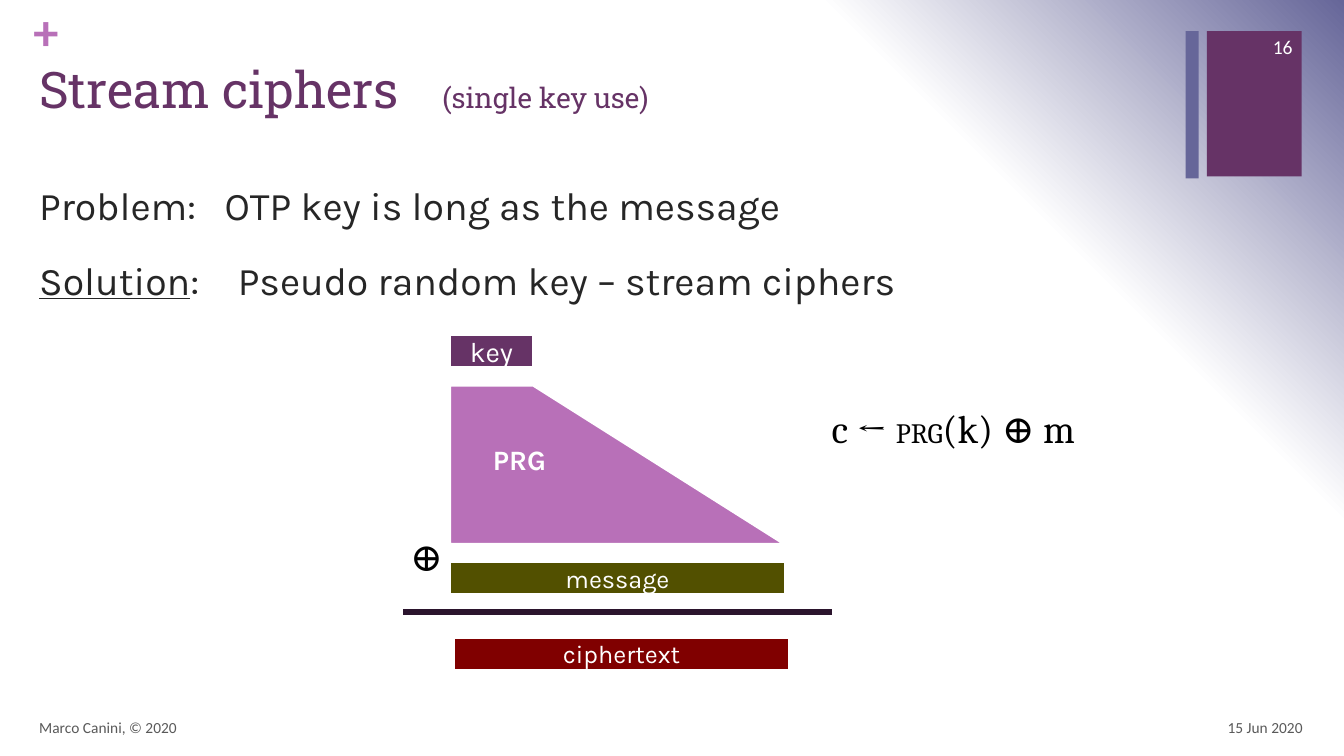
"""Builds the stream ciphers slide: a short key expanded by a PRG to encrypt a message."""
from lxml import etree
from pptx import Presentation
from pptx import util as u
from pptx.dml.color import RGBColor
from pptx.enum import shapes, text
from pptx.oxml import parse_xml
from pptx.oxml.ns import nsdecls, qn

THEME = {
    "plum": "663366", "orchid": "B870B8", "slate": "666699", "olive": "525000",
    "maroon": "800000", "rule": "2B142D", "ink": "262626", "grey": "595959",
    "white": "FFFFFF", "black": "000000",
    "head": "Roboto Slab", "body": "Karla", "math": "Cambria", "small": "Calibri",
    "title": 36, "large": 28, "label": 20, "bar": 18, "number": 14, "footer": 11,
}

LEFT, MIDDLE, RIGHT = text.PP_ALIGN.LEFT, text.PP_ALIGN.CENTER, text.PP_ALIGN.RIGHT

PANELS = [
    ((11.97, 0.31, 0.94, 1.44), "plum"),
    ((11.76, 0.31, 0.13, 1.46), "slate"),
]
TITLE = [("Stream ciphers\t", {}), ("(single key use)", {"size": "label"})]
BODY = [
    (1.84, [("Problem:\tOTP key is long as the message", {})]),
    (1.97, [("Solution", {"underline": True}),
            (":\tPseudo random key – stream ciphers", {})]),
]
FORMULA = [("c ← ", {}), ("PRG", {"size": "label"}), ("(k) ⊕ m", {})]

DIAGRAM_X, KEY_W, BAR_W, BAR_H = 4.46, 0.83, 3.33, 0.33
PRG_TOP, PRG_BOTTOM = 3.82, 5.4
BARS = [
    ("key", DIAGRAM_X, 3.32, KEY_W, "plum", "label"),
    ("message", DIAGRAM_X, 5.57, BAR_W, "olive", "bar"),
    ("ciphertext", 4.5, 6.32, BAR_W, "maroon", "bar"),
]
RULE = (4, 6.07, 8.25, 6.07)

LABELS = [
    ((0.33, 0, 0.38, 0.61), "+", ("small", "title", "orchid", True), LEFT, "TOP", 0),
    ((9.91, 7.02, 3.11, 0.4), "15 Jun 2020", ("small", "footer", "grey", False), RIGHT, "MIDDLE", 0.1),
    ((0.29, 7.02, 8.93, 0.4), "Marco Canini, © 2020", ("small", "footer", "grey", False), LEFT, "MIDDLE", 0.1),
    ((4.79, 4.34, 0.89, 0.44), "PRG", ("body", "label", "white", True), LEFT, "TOP", 0.1),
    ((3.97, 5.23, 0.51, 0.57), "⊕", ("math", "large", "black", False), MIDDLE, "TOP", 0.1),
    ((12.11, 0.26, 0.81, 0.4), "16", ("small", "number", "white", False), RIGHT, "MIDDLE", 0.1),
]


def rgb(name):
    return RGBColor.from_string(THEME[name])


def inches(values):
    return [u.Inches(v) for v in values]


def add_runs(p, runs, font, size, color, bold=False):
    for words, changes in runs:
        r = p.add_run()
        r.text = words
        style = {"name": THEME[font], "size": size, "bold": bold, **changes}
        style["size"] = u.Pt(THEME[style["size"]])
        for key, value in style.items():
            setattr(r.font, key, value)
        r.font.color.rgb = rgb(color)


def add_tab(p, position):
    tabs = etree.SubElement(p._p.get_or_add_pPr(), qn("a:tabLst"))
    etree.SubElement(tabs, qn("a:tab"), pos=str(u.Inches(position)), algn="l")


def add_text(s, box, wrap=True, anchor="TOP", side=0.1):
    tf = s.shapes.add_textbox(*inches(box)).text_frame
    layout = {"word_wrap": wrap, "vertical_anchor": text.MSO_ANCHOR[anchor],
              "margin_left": u.Inches(side), "margin_right": u.Inches(side),
              "margin_top": u.Inches(side / 2), "margin_bottom": u.Inches(side / 2)}
    for key, value in layout.items():
        setattr(tf, key, value)
    return tf


def paint(sp, color, outline=False):
    sp.shadow.inherit = False
    sp.fill.solid()
    sp.fill.fore_color.rgb = rgb(color)
    if outline:
        sp.line.color.rgb = rgb("white")
        sp.line.width = u.Pt(2.25)
    else:
        sp.line.fill.background()


def add_rect(s, box, color, outline=False):
    sp = s.shapes.add_shape(shapes.MSO_SHAPE.RECTANGLE, *inches(box))
    paint(sp, color, outline)
    return sp


def set_background(s):
    stops = "".join(
        f'<a:gs pos="{at * 1000}"><a:srgbClr val="{THEME[color]}"/></a:gs>'
        for at, color in [(0, "white"), (75, "white"), (100, "slate")])
    s._element.cSld.insert(0, parse_xml(
        f'<p:bg {nsdecls("p", "a")}><p:bgPr><a:gradFill rotWithShape="1">'
        f'<a:gsLst>{stops}</a:gsLst><a:path path="circle">'
        '<a:fillToRect t="100000" r="100000"/></a:path></a:gradFill>'
        '<a:effectLst/></p:bgPr></p:bg>'))


def add_copy(s):
    p = add_text(s, (0.29, 0.53, 11.45, 1.22)).paragraphs[0]
    add_tab(p, 4)
    add_runs(p, TITLE, "head", "title", "plum")
    tf = add_text(s, (0.29, 1.75, 12.73, 5.27))
    for i, (tab, runs) in enumerate(BODY):
        p = tf.add_paragraph() if i else tf.paragraphs[0]
        if i:
            p.space_before = u.Pt(20)
        add_tab(p, tab)
        add_runs(p, runs, "body", "large", "ink")


def add_diagram(s):
    for words, x, y, w, color, size in BARS:
        tf = add_rect(s, (x, y, w, BAR_H), color, True).text_frame
        tf.vertical_anchor = text.MSO_ANCHOR.MIDDLE
        p = tf.paragraphs[0]
        p.alignment = MIDDLE
        add_runs(p, [(words, {})], "body", size, "white")

    corners = [(DIAGRAM_X, PRG_BOTTOM), (DIAGRAM_X + BAR_W, PRG_BOTTOM),
               (DIAGRAM_X + KEY_W, PRG_TOP)]
    outline = s.shapes.build_freeform(*inches((DIAGRAM_X, PRG_TOP)))
    outline.add_line_segments([inches(c) for c in corners], close=True)
    paint(outline.convert_to_shape(), "orchid", True)

    rule = s.shapes.add_connector(shapes.MSO_CONNECTOR.STRAIGHT, *inches(RULE))
    rule.line.color.rgb = rgb("rule")
    rule.line.width = u.Pt(4.5)
    etree.SubElement(rule._element.spPr, qn("a:effectLst"))


def main():
    prs = Presentation()
    prs.slide_width, prs.slide_height = inches((13.33, 7.5))
    s = prs.slides.add_slide(prs.slide_layouts[6])
    set_background(s)
    for box, color in PANELS:
        add_rect(s, box, color)
    add_copy(s)
    add_diagram(s)
    for box, words, style, align, anchor, side in LABELS:
        p = add_text(s, box, False, anchor, side).paragraphs[0]
        p.alignment = align
        add_runs(p, [(words, {})], *style)
    p = add_text(s, (8.15, 3.96, 2.77, 0.57), False).paragraphs[0]
    add_runs(p, FORMULA, "math", "large", "black")
    prs.save("out.pptx")


if __name__ == "__main__":
    main()
